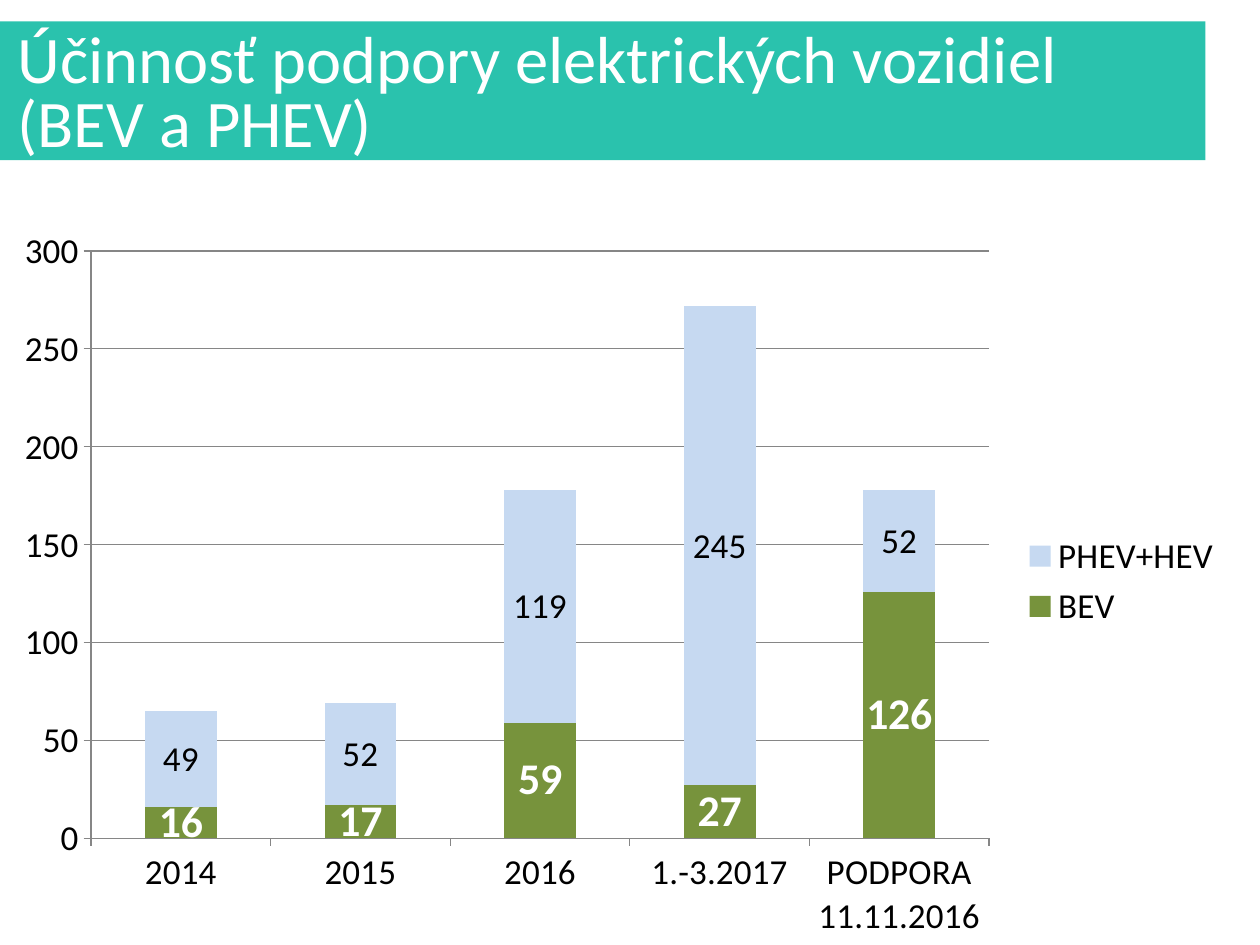
from lxml import etree
from pptx import Presentation
from pptx.chart.data import CategoryChartData
from pptx.dml.color import RGBColor
from pptx.enum.chart import XL_CHART_TYPE, XL_LABEL_POSITION, XL_LEGEND_POSITION, XL_TICK_MARK
from pptx.enum.shapes import MSO_SHAPE
from pptx.enum.text import MSO_ANCHOR, MSO_AUTO_SIZE, PP_ALIGN
from pptx.oxml.ns import qn
from pptx.util import Cm, Pt

STACKED = XL_CHART_TYPE.COLUMN_STACKED
CENTER = XL_LABEL_POSITION.CENTER
RIGHT = XL_LEGEND_POSITION.RIGHT
OUTSIDE = XL_TICK_MARK.OUTSIDE
RECTANGLE = MSO_SHAPE.RECTANGLE
TOP = MSO_ANCHOR.TOP
NO_AUTOFIT = MSO_AUTO_SIZE.NONE
LEFT = PP_ALIGN.LEFT

FONT = "Calibri"
COLORS = {
    "banner": "2AC2AD",
    "white": "FFFFFF",
    "black": "000000",
    "bev": "77933C",
    "phev": "C6D9F1",
    "axis": "868686",
}
TITLE_LINES = ["Účinnosť podpory elektrických vozidiel", "(BEV a PHEV)"]
CATEGORIES = ["2014", "2015", "2016", "1.-3.2017", "PODPORA 11.11.2016"]
SERIES = [
    ("BEV", [16, 17, 59, 27, 126], "bev", 25, "white", True),
    ("PHEV+HEV", [49, 52, 119, 245, 52], "phev", 20, "black", False),
]
PLOT_LAYOUT = {"x": 0.07, "y": 0.05, "w": 0.73, "h": 0.8}


def color(name):
    return RGBColor.from_string(COLORS[name])


def style_font(font, size, color_name, bold=False):
    font.name = FONT
    font.size = Pt(size)
    font.bold = bold
    font.color.rgb = color(color_name)


def place(shape, left, top, width, height):
    shape.left, shape.top = Cm(left), Cm(top)
    shape.width, shape.height = Cm(width), Cm(height)


def add_banner(page):
    banner = page.shapes.add_shape(RECTANGLE, Cm(-0.1), Cm(0.43), Cm(24.4), Cm(2.8))
    banner.shadow.inherit = False
    banner.fill.solid()
    banner.fill.fore_color.rgb = color("banner")
    banner.line.fill.background()
    page.shapes.title.element.addprevious(banner.element)


def write_title(page):
    title = page.shapes.title
    place(title, 0.1, 0.53, 25.3, 2.9)
    frame = title.text_frame
    frame.text = "\n".join(TITLE_LINES)
    frame.word_wrap = True
    frame.auto_size = NO_AUTOFIT
    frame.vertical_anchor = TOP
    for para in frame.paragraphs:
        para.alignment = LEFT
        para.line_spacing = 0.8
        for span in para.runs:
            style_font(span.font, 38, "white")


def style_axis(axis):
    axis.major_tick_mark = OUTSIDE
    axis.format.line.color.rgb = color("axis")
    style_font(axis.tick_labels.font, 20, "black")


def style_series(series, fill, size, text_color, bold):
    series.format.fill.solid()
    series.format.fill.fore_color.rgb = color(fill)
    labels = series.data_labels
    labels.show_value = True
    labels.position = CENTER
    style_font(labels.font, size, text_color, bold)


def fix_plot_area(chart):
    plot_area = chart.element.find(".//" + qn("c:plotArea"))
    for old_layout in plot_area.findall(qn("c:layout")):
        plot_area.remove(old_layout)
    layout = etree.Element(qn("c:layout"))
    manual = etree.SubElement(layout, qn("c:manualLayout"))
    settings = {"layoutTarget": "inner", "xMode": "edge", "yMode": "edge", **PLOT_LAYOUT}
    for tag, value in settings.items():
        etree.SubElement(manual, qn("c:" + tag)).set("val", str(value))
    plot_area.insert(0, layout)


def add_vehicle_chart(page):
    data = CategoryChartData()
    data.categories = CATEGORIES
    for name, values, *_ in SERIES:
        data.add_series(name, values)
    frame = page.shapes.add_chart(STACKED, Cm(0.1), Cm(4.32), Cm(24.8), Cm(14.8), data)
    chart = frame.chart
    chart.has_title = False
    style_font(chart.font, 10, "black")

    style_axis(chart.category_axis)
    value_axis = chart.value_axis
    style_axis(value_axis)
    value_axis.minimum_scale = 0
    value_axis.maximum_scale = 300
    value_axis.major_unit = 50
    value_axis.has_major_gridlines = True
    value_axis.major_gridlines.format.line.color.rgb = color("axis")

    chart.has_legend = True
    chart.legend.position = RIGHT
    chart.legend.include_in_layout = False
    style_font(chart.legend.font, 20, "black")

    plot = chart.plots[0]
    plot.gap_width = 150
    plot.overlap = 100
    plot.vary_by_categories = False
    for series, (_, _, *style) in zip(plot.series, SERIES):
        style_series(series, *style)
    fix_plot_area(chart)


def main():
    deck = Presentation()
    deck.slide_width, deck.slide_height = Cm(25.4), Cm(19.05)
    page = deck.slides.add_slide(deck.slide_layouts[5])
    add_banner(page)
    write_title(page)
    add_vehicle_chart(page)
    deck.save("out.pptx")


if __name__ == "__main__":
    main()
